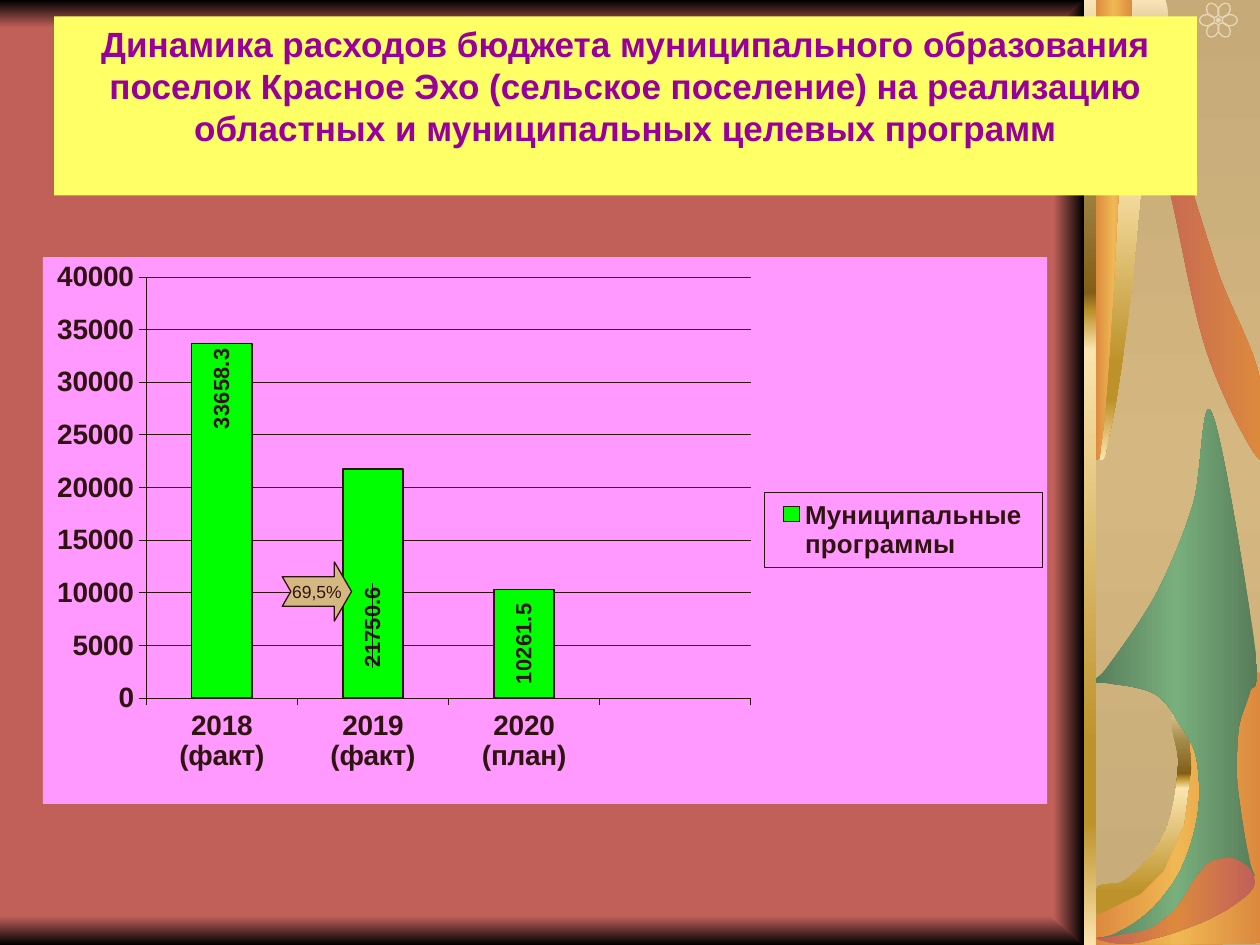
from math import cos, pi, sin

from pptx import Presentation
from pptx.chart.data import CategoryChartData
from pptx.dml.color import RGBColor
from pptx.enum.chart import XL_CHART_TYPE, XL_LABEL_POSITION, XL_LEGEND_POSITION, XL_TICK_MARK
from pptx.enum.shapes import MSO_SHAPE
from pptx.enum.text import MSO_ANCHOR, PP_ALIGN
from pptx.oxml import parse_xml
from pptx.oxml.ns import nsdecls, qn
from pptx.util import Inches, Pt

RED = RGBColor(0xC1, 0x60, 0x59)
BLACK = RGBColor(0x00, 0x00, 0x00)
DARK = RGBColor(0x2F, 0x13, 0x11)
TAN = RGBColor(0xD5, 0xB7, 0x81)
SAND = RGBColor(0xC6, 0xAA, 0x78)
CREAM = RGBColor(0xE7, 0xD6, 0xB7)
ORANGE = RGBColor(0xDC, 0x89, 0x3E)
AMBER = RGBColor(0xF0, 0xB8, 0x54)
MOSS = RGBColor(0x57, 0x7D, 0x59)
LEAF = RGBColor(0x79, 0xAF, 0x7D)
PALE_GOLD = RGBColor(0xFA, 0xE3, 0xB7)
OLIVE = RGBColor(0xA2, 0x89, 0x49)
BRONZE = RGBColor(0x83, 0x5E, 0x17)
GOLD = RGBColor(0xBD, 0x92, 0x2A)
LIGHT_GOLD = RGBColor(0xFB, 0xE4, 0xAE)
YELLOW = RGBColor(0xFF, 0xFF, 0x66)
PURPLE = RGBColor(0x99, 0x00, 0x99)
PINK = RGBColor(0xFF, 0x99, 0xFF)
GREEN = RGBColor(0x00, 0xFF, 0x00)

GOLD_BAND = ([(0, PALE_GOLD), (18, OLIVE), (31, BRONZE), (33, GOLD), (37, LIGHT_GOLD),
              (79, GOLD), (87, GOLD), (100, LIGHT_GOLD)], 90)
ORANGE_BAND = ([(0, ORANGE), (50, AMBER), (100, ORANGE)], 0)


def place(parent, index, **layout):
    for old in parent.findall(qn("c:layout")):
        parent.remove(old)
    parts = "".join(f'<c:{key} val="{value}"/>' for key, value in layout.items())
    parent.insert(index, parse_xml(
        f'<c:layout {nsdecls("c")}><c:manualLayout>{parts}</c:manualLayout></c:layout>'))


class Deck:
    font = "Arial"

    def __init__(self, slide):
        self.s = slide

    def paint(self, sp, fill, line=None):
        sp.shadow.inherit = False
        if fill is None:
            sp.fill.background()
        elif isinstance(fill, RGBColor):
            sp.fill.solid()
            sp.fill.fore_color.rgb = fill
        else:
            stops, angle = fill
            gs = "".join(f'<a:gs pos="{pos * 1000}"><a:srgbClr val="{color}"/></a:gs>'
                         for pos, color in stops)
            sp._element.spPr.insert(2, parse_xml(
                f'<a:gradFill {nsdecls("a")} rotWithShape="1"><a:gsLst>{gs}</a:gsLst>'
                f'<a:lin ang="{angle * 60000}" scaled="0"/></a:gradFill>'))
        if line is None:
            sp.line.fill.background()
        else:
            sp.line.color.rgb = line
            sp.line.width = Pt(0.75)
        return sp

    def shape(self, box, fill, kind=MSO_SHAPE.RECTANGLE, line=None):
        return self.paint(self.s.shapes.add_shape(kind, *map(Inches, box)), fill, line)

    def outline(self, fill, start, *segments):
        points, last = [], start
        for seg in segments:
            if len(seg) == 2:
                points.append(seg)
            else:
                ctrl = [last, seg[:2], seg[2:4], seg[4:]]
                for t in (i / 12 for i in range(1, 13)):
                    weights = ((1 - t) ** 3, 3 * t * (1 - t) ** 2, 3 * t * t * (1 - t), t ** 3)
                    points.append(tuple(sum(w * c[k] for w, c in zip(weights, ctrl))
                                        for k in (0, 1)))
            last = seg[-2:]
        builder = self.s.shapes.build_freeform(Inches(start[0]), Inches(start[1]))
        builder.add_line_segments([(Inches(x), Inches(y)) for x, y in points], close=True)
        return self.paint(builder.convert_to_shape(), fill)

    def flower(self, x, y, petals=6):
        for i in range(petals):
            angle = 2 * pi * i / petals
            px, py = x + 0.09 * cos(angle), y + 0.09 * sin(angle)
            petal = self.shape((px - 0.06, py - 0.045, 0.12, 0.09), None, MSO_SHAPE.OVAL, CREAM)
            petal.rotation = 360 * i / petals
        self.shape((x - 0.02, y - 0.02, 0.04, 0.04), CREAM, MSO_SHAPE.OVAL)

    def style(self, font, size, color, bold=True):
        font.name, font.size, font.bold = self.font, Pt(size), bold
        font.color.rgb = color

    def text(self, sp, text, size, color, bold=True, anchor=MSO_ANCHOR.TOP, wrap=True):
        tf = sp.text_frame
        tf.text, tf.word_wrap, tf.vertical_anchor = text, wrap, anchor
        p = tf.paragraphs[0]
        p.alignment = PP_ALIGN.CENTER
        self.style(p.runs[0].font, size, color, bold)

    def chart(self, box, name, values, labels):
        data = CategoryChartData()
        data.categories = list(values)
        data.add_series(name, list(values.values()))
        chart = self.s.shapes.add_chart(
            XL_CHART_TYPE.COLUMN_CLUSTERED, *map(Inches, box), data).chart
        self.style(chart.font, 16, DARK)
        chart.has_title = False
        space = chart._chartSpace
        space.find(qn("c:chart")).addnext(parse_xml(
            f'<c:spPr {nsdecls("c", "a")}><a:solidFill><a:srgbClr val="{PINK}"/></a:solidFill>'
            '<a:ln><a:noFill/></a:ln></c:spPr>'))
        place(space.xpath("c:chart/c:plotArea")[0], 0, layoutTarget="inner", xMode="edge",
              yMode="edge", x=0.103, y=0.036, w=0.602, h=0.77)

        value_axis, category_axis = chart.value_axis, chart.category_axis
        value_axis.minimum_scale, value_axis.maximum_scale, value_axis.major_unit = 0, 40000, 5000
        value_axis.has_major_gridlines = True
        for axis in (value_axis, category_axis):
            axis.major_tick_mark = XL_TICK_MARK.OUTSIDE
            self.style(axis.tick_labels.font, 16, DARK)
        for part in (value_axis, category_axis, value_axis.major_gridlines):
            part.format.line.color.rgb = DARK
            part.format.line.width = Pt(0.22)

        plot = chart.plots[0]
        plot.gap_width, plot.vary_by_categories = 150, False
        series = plot.series[0]
        series.format.fill.solid()
        series.format.fill.fore_color.rgb = GREEN
        series.format.line.color.rgb = DARK
        series.format.line.width = Pt(0.9)
        for i, (position, shift) in enumerate(labels):
            label = series.points[i].data_label
            self.style(label.font, 12.5, DARK)
            label.position = position
            element = space.xpath(".//c:dLbl")[i]
            element.xpath(".//a:bodyPr")[0].set("rot", "-5400000")
            if shift:
                place(element, 1, x=0, y=shift)

        chart.has_legend = True
        legend = chart.legend
        legend.position = XL_LEGEND_POSITION.RIGHT
        legend.include_in_layout = False
        self.style(legend.font, 14.8, DARK)
        element = space.xpath(".//c:legend")[0]
        place(element, 1, xMode="edge", yMode="edge", x=0.718, y=0.43, w=0.277, h=0.138)
        element.find(qn("c:overlay")).addnext(parse_xml(
            f'<c:spPr {nsdecls("c", "a")}><a:noFill/><a:ln w="2800"><a:solidFill>'
            f'<a:srgbClr val="{DARK}"/></a:solidFill></a:ln></c:spPr>'))


def main():
    prs = Presentation()
    prs.slide_width, prs.slide_height = Inches(10), Inches(7.5)
    s = prs.slides.add_slide(prs.slide_layouts[6])
    s.background.fill.solid()
    s.background.fill.fore_color.rgb = RED
    deck = Deck(s)

    deck.shape((0, 7.27, 8.84, 0.23), ([(0, RED), (100, BLACK)], 90))
    deck.shape((0, 0, 8.84, 0.22), ([(0, BLACK), (100, RED)], 90))
    deck.shape((8.7, 0, 1.3, 7.5), ([(0, SAND), (50, TAN), (100, SAND)], 90))
    deck.flower(9.67, 0.16)
    deck.outline(GOLD_BAND, (9.34, 5.64), (9.23, 5.7, 9.37, 5.92, 9.35, 6.08),
                 (9.34, 6.25, 9.31, 6.48, 9.24, 6.62), (9.17, 6.77, 9.03, 6.91, 8.94, 6.98),
                 (8.85, 7.05, 8.74, 6.98, 8.7, 7.06), (8.7, 7.49), (10, 7.49), (10, 5.68),
                 (9.89, 5.37, 9.48, 5.64, 9.34, 5.64))
    deck.outline(ORANGE_BAND, (8.68, 7.5), (8.68, 7.28), (9.05, 7.1), (9.24, 6.91), (9.4, 6.55),
                 (9.46, 6.1), (9.44, 5.76), (9.87, 5.31), (10, 5.34), (10, 7.49))
    deck.outline(([(0, MOSS), (50, LEAF), (100, MOSS)], 0), (9.62, 3.28),
                 (9.54, 3.08, 9.54, 3.77, 9.47, 4), (9.4, 4.23, 9.3, 4.47, 9.19, 4.69),
                 (9.08, 4.9, 8.89, 5.16, 8.8, 5.28), (8.72, 5.4, 8.67, 5.38, 8.68, 5.41),
                 (8.68, 5.43, 8.76, 5.41, 8.84, 5.43), (8.93, 5.44, 9.08, 5.46, 9.17, 5.51),
                 (9.25, 5.56, 9.3, 5.64, 9.35, 5.73), (9.41, 5.82, 9.48, 5.91, 9.5, 6.04),
                 (9.52, 6.17, 9.53, 6.34, 9.5, 6.5), (9.47, 6.66, 9.41, 6.86, 9.31, 7.01),
                 (9.21, 7.16, 9.08, 7.3, 8.89, 7.39), (8.78, 7.46, 8.69, 7.43, 8.71, 7.45),
                 (8.73, 7.46, 8.9, 7.5, 9.01, 7.48), (9.12, 7.46, 9.26, 7.41, 9.34, 7.34),
                 (9.43, 7.28, 9.48, 7.15, 9.54, 7.07), (9.6, 7, 9.65, 6.93, 9.71, 6.9),
                 (9.76, 6.87, 9.83, 6.89, 9.88, 6.9), (9.92, 6.91, 9.95, 6.97, 9.96, 6.95),
                 (9.96, 6.94, 9.93, 6.91, 9.91, 6.79), (9.88, 6.67, 9.84, 6.39, 9.82, 6.22),
                 (9.81, 6.05, 9.82, 5.91, 9.83, 5.79), (9.85, 5.67, 9.89, 5.6, 9.92, 5.5),
                 (9.94, 5.4, 10, 5.56, 9.97, 5.2), (9.92, 4.84, 9.71, 3.48, 9.62, 3.28))
    deck.outline(([(0, RED), (100, ORANGE)], 0), (9.14, 0.4),
                 (9.2, 0.51, 9.29, 0.94, 9.38, 1.24), (9.47, 1.54, 9.58, 1.9, 9.68, 2.2),
                 (9.79, 2.49, 9.96, 2.78, 10, 3.02), (10, 3.65),
                 (9.94, 3.61, 9.7, 3.16, 9.58, 2.8), (9.46, 2.44, 9.37, 1.87, 9.28, 1.5),
                 (9.19, 1.13, 9.07, 0.76, 9.05, 0.58), (9.02, 0.4, 9.09, 0.29, 9.14, 0.4))
    deck.outline(GOLD_BAND, (8.69, 3.64), (8.78, 3.67, 8.76, 3.64, 8.8, 3.46),
                 (8.85, 3.28, 8.9, 2.92, 8.95, 2.54), (9, 2.16, 9.04, 1.6, 9.09, 1.18),
                 (9.14, 0.75, 9.32, 0.2, 9.25, 0), (8.69, 0))
    deck.outline(ORANGE_BAND, (8.69, 3.64), (8.74, 3.67, 8.72, 3.64, 8.75, 3.46),
                 (8.77, 3.28, 8.8, 2.92, 8.82, 2.54), (8.85, 2.16, 8.87, 1.6, 8.9, 1.18),
                 (8.93, 0.76, 9.02, 0.2, 8.98, 0), (8.69, 0))
    deck.shape((8.6, 0, 0.1, 7.5), GOLD_BAND)
    deck.outline(([(0, RED), (50, ORANGE), (100, RED)], 0), (8.7, 7.45),
                 (8.7, 7.44, 8.83, 7.44, 8.9, 7.42), (8.98, 7.41, 9.07, 7.4, 9.15, 7.36),
                 (9.22, 7.32, 9.3, 7.25, 9.35, 7.19), (9.41, 7.12, 9.45, 7.03, 9.49, 6.97),
                 (9.54, 6.91, 9.56, 6.87, 9.61, 6.84), (9.66, 6.82, 9.72, 6.81, 9.77, 6.81),
                 (9.81, 6.82, 9.83, 6.83, 9.86, 6.85), (9.89, 6.87, 9.93, 6.89, 9.94, 6.93),
                 (9.96, 6.96, 9.98, 7.01, 9.94, 7.06), (9.91, 7.11, 9.81, 7.17, 9.74, 7.22),
                 (9.66, 7.26, 9.58, 7.31, 9.49, 7.34), (9.39, 7.38, 9.25, 7.43, 9.15, 7.45),
                 (9.06, 7.48, 8.99, 7.49, 8.91, 7.49), (8.83, 7.49, 8.71, 7.46, 8.7, 7.45))
    deck.outline(([(0, RED), (100, BLACK)], 0), (8.6, 0), (8.36, 0.21), (8.36, 7.29), (8.6, 7.5))

    title = deck.shape((0.43, 0.13, 9.07, 1.42), YELLOW)
    deck.text(title, "Динамика расходов бюджета муниципального образования поселок Красное Эхо "
              "(сельское поселение) на реализацию областных и муниципальных целевых программ",
              20, PURPLE)
    deck.chart((0.34, 2.04, 7.97, 4.34), "Муниципальные программы",
               {"2018 (факт)": 33658.3, "2019 (факт)": 21750.6, "2020 (план)": 10261.5, "": None},
               [(XL_LABEL_POSITION.INSIDE_END, 0), (XL_LABEL_POSITION.CENTER, 0.08),
                (XL_LABEL_POSITION.CENTER, 0)])
    arrow = deck.shape((2.24, 4.46, 0.55, 0.47), TAN, MSO_SHAPE.NOTCHED_RIGHT_ARROW, DARK)
    arrow.adjustments[0], arrow.adjustments[1] = 0.5, 0.29
    deck.text(arrow, "69,5%", 10, DARK, bold=False, anchor=MSO_ANCHOR.MIDDLE, wrap=False)
    prs.save("out.pptx")


if __name__ == "__main__":
    main()
